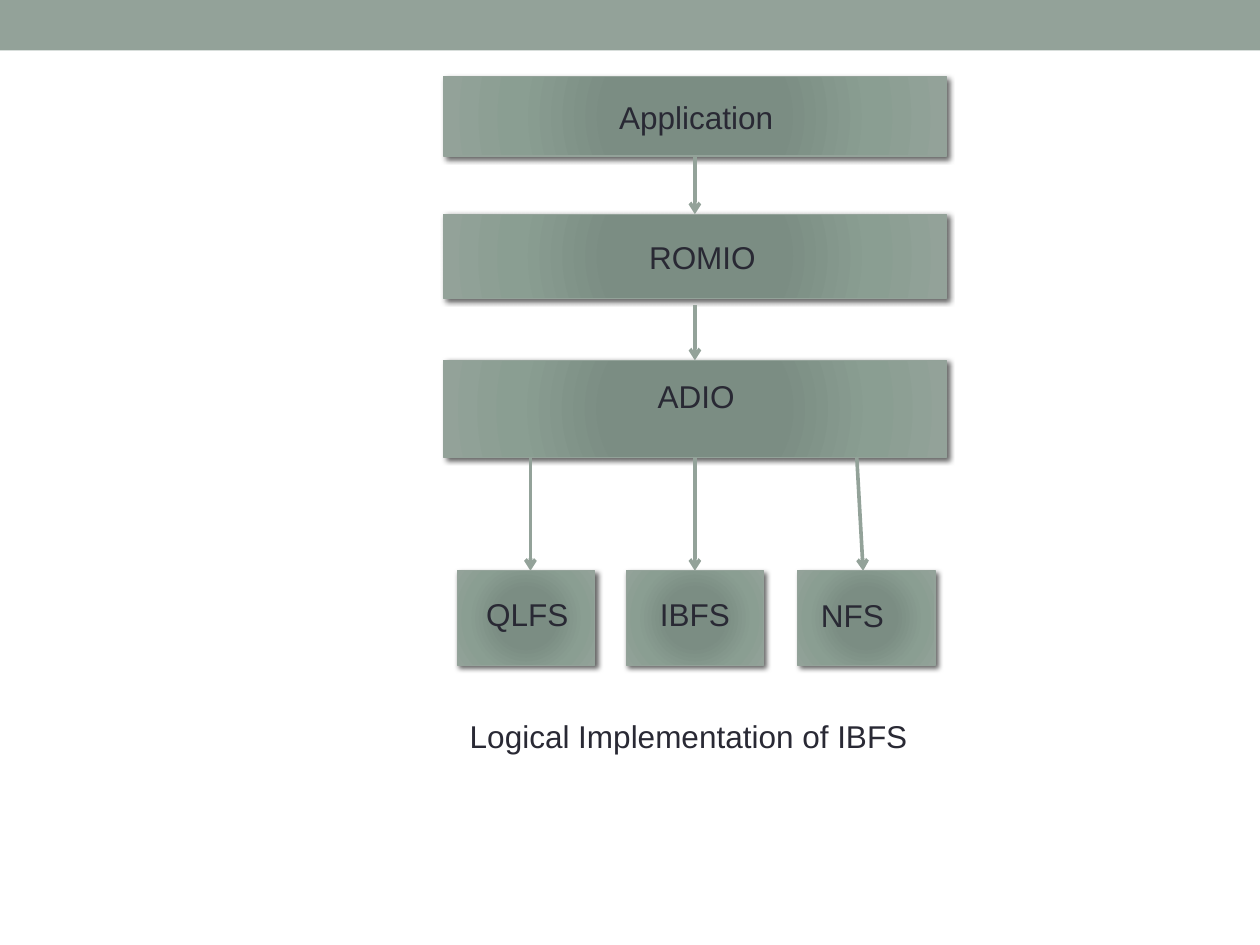
from dataclasses import dataclass

from pptx import Presentation
from pptx import util as u
from pptx.dml.color import RGBColor
from pptx.enum import shapes, text
from pptx.oxml import parse_xml
from pptx.oxml.ns import nsdecls


@dataclass(frozen=True)
class Theme:
    sage: str = "93A299"
    ink: str = "292934"
    shadow: str = "000000"
    stops: tuple = ((0, "7B8E82"), (34, "7B8D83"), (70, "8A9E92"), (100, "93A299"))
    font: str = "Arial"
    size: float = 18
    outline: float = 0.75
    arrow: float = 2.08


THEME = Theme()
CENTER = text.PP_ALIGN.CENTER
LABEL_H = 0.4
LAYER_X, LAYER_W = 3.52, 3.99
STORE_Y, STORE_W, STORE_H = 4.53, 1.09, 0.75
TOP, BOTTOM = 0, 2

# name, box top, box height, label left, label top, label width
LAYERS = [
    ("Application", 0.61, 0.63, 3.63, 0.73, 3.79),
    ("ROMIO", 1.7, 0.67, 3.64, 1.84, 3.87),
    ("ADIO", 2.86, 0.77, 3.59, 2.94, 3.87),
]
# name, box left, label left, label top, label width
STORES = [
    ("QLFS", 3.63, 3.64, 4.67, 1.09),
    ("IBFS", 4.97, 5.08, 4.67, 0.87),
    ("NFS", 6.33, 6.33, 4.68, 0.87),
]


def inches(*values):
    return [u.Inches(v) for v in values]


def set_all(obj, **values):
    for name, value in values.items():
        setattr(obj, name, value)


def add_rect(s, *box):
    sp = s.shapes.add_shape(shapes.MSO_SHAPE.RECTANGLE, *inches(*box))
    sp.shadow.inherit = False
    return sp


def add_banner(s):
    sp = add_rect(s, 0, 0, 10, 0.4)
    sp.fill.solid()
    sp.fill.fore_color.rgb = RGBColor.from_string(THEME.sage)
    sp.line.fill.background()


def add_box(s, *box):
    """Add a rectangle with a radial gradient and a soft drop shadow."""
    sp = add_rect(s, *box)
    stops = "".join(
        f'<a:gs pos="{pos * 1000}"><a:srgbClr val="{color}"/></a:gs>'
        for pos, color in THEME.stops
    )
    gradient = parse_xml(
        f'<a:gradFill {nsdecls("a")} rotWithShape="1"><a:gsLst>{stops}</a:gsLst>'
        '<a:path path="circle">'
        '<a:fillToRect l="100000" t="100000" r="100000" b="100000"/>'
        "</a:path></a:gradFill>"
    )
    sp._element.spPr.find("{*}prstGeom").addnext(gradient)
    sp.line.color.rgb = RGBColor.from_string(THEME.sage)
    sp.line.width = u.Pt(THEME.outline)
    sp._element.spPr.find("{*}effectLst").append(parse_xml(
        f'<a:outerShdw {nsdecls("a")} blurRad="{u.Pt(3)}" dist="{u.Pt(2)}" '
        f'dir="2700000" rotWithShape="0"><a:srgbClr val="{THEME.shadow}">'
        '<a:alpha val="60000"/></a:srgbClr></a:outerShdw>'
    ))
    return sp


def add_label(s, words, x, y, w, align=CENTER):
    tf = s.shapes.add_textbox(*inches(x, y, w, LABEL_H)).text_frame
    set_all(tf, word_wrap=True, auto_size=text.MSO_AUTO_SIZE.SHAPE_TO_FIT_TEXT)
    p = tf.paragraphs[0]
    p.alignment = align
    r = p.add_run()
    r.text = words
    set_all(r.font, name=THEME.font, size=u.Pt(THEME.size))
    r.font.color.rgb = RGBColor.from_string(THEME.ink)


def add_arrow(s, start, end, source=None, target=None):
    """Draw an arrow, joined to source's bottom and target's top where given."""
    c = s.shapes.add_connector(
        shapes.MSO_CONNECTOR.STRAIGHT, *inches(*start, *end))
    if source is not None:
        c.begin_connect(source, BOTTOM)
    if target is not None:
        c.end_connect(target, TOP)
    c.line.color.rgb = RGBColor.from_string(THEME.sage)
    c.line.width = u.Pt(THEME.arrow)
    c.line._get_or_add_ln().append(
        parse_xml(f'<a:tailEnd {nsdecls("a")} type="arrow"/>'))
    c._element.spPr.append(parse_xml(f'<a:effectLst {nsdecls("a")}/>'))


def main():
    prs = Presentation()
    set_all(prs, slide_width=u.Inches(10), slide_height=u.Inches(7.5))
    s = prs.slides.add_slide(prs.slide_layouts[6])
    add_banner(s)

    boxes = {}
    for name, y, h, *label in LAYERS:
        boxes[name] = add_box(s, LAYER_X, y, LAYER_W, h)
        add_label(s, name, *label)
    for name, x, *label in STORES:
        boxes[name] = add_box(s, x, STORE_Y, STORE_W, STORE_H)
        add_label(s, name, *label)

    mid = LAYER_X + LAYER_W / 2
    app, romio, adio, ibfs = (
        boxes[name] for name in ("Application", "ROMIO", "ADIO", "IBFS"))
    add_arrow(s, (mid, 1.24), (mid, 1.7), app, romio)
    add_arrow(s, (mid, 2.42), (mid, 2.86), target=adio)
    add_arrow(s, (mid, 3.63), (mid, STORE_Y), adio, ibfs)
    add_arrow(s, (4.21, 3.63), (4.21, STORE_Y))
    add_arrow(s, (6.8, 3.63), (6.85, STORE_Y))

    add_label(s, "Logical Implementation of IBFS", 3.63, 5.64, 4.06,
              text.PP_ALIGN.LEFT)
    prs.save("out.pptx")


if __name__ == "__main__":
    main()
